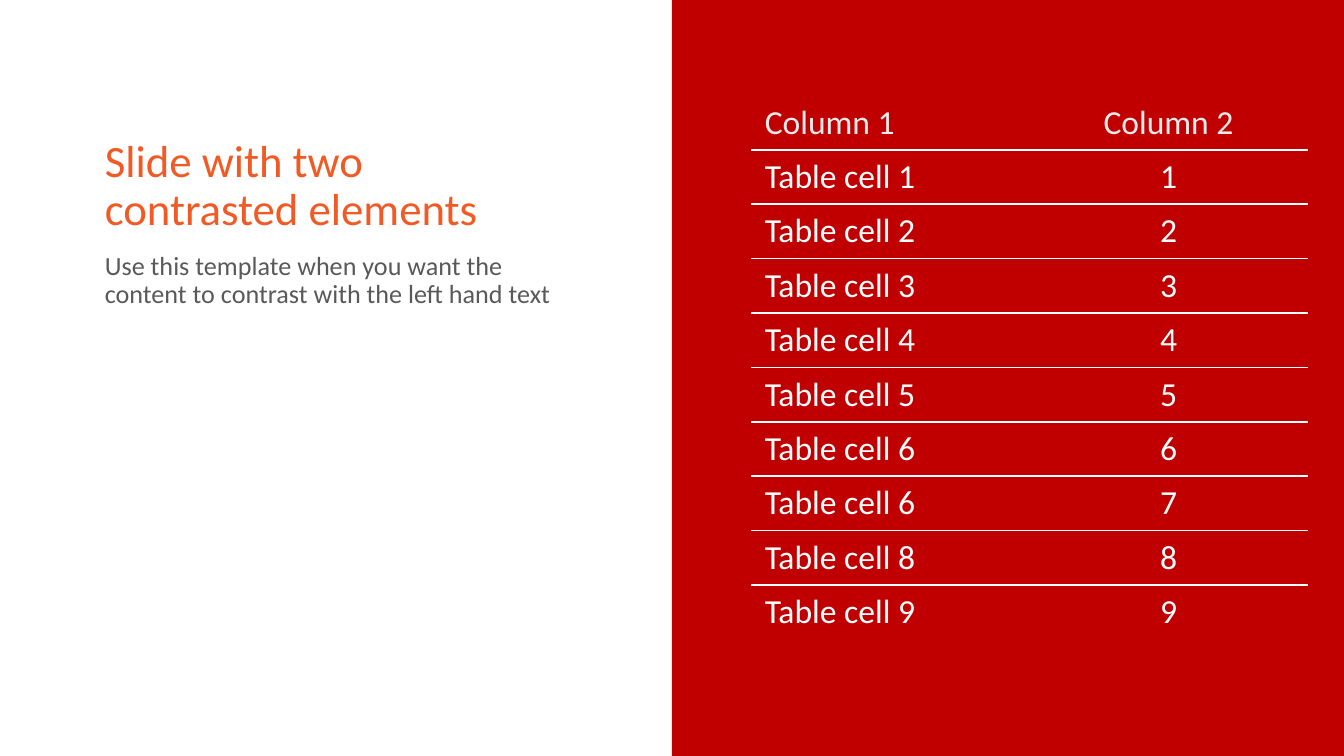
from lxml import etree
from pptx import Presentation
from pptx import util as u
from pptx.dml.color import RGBColor
from pptx.enum import shapes, text
from pptx.oxml import ns

RED = RGBColor(0xC0, 0x00, 0x00)
ORANGE = RGBColor(0xF1, 0x5A, 0x24)
GRAY = RGBColor(0x59, 0x59, 0x59)
PALE = RGBColor(0xEB, 0xEB, 0xEB)
WHITE = RGBColor(0xFF, 0xFF, 0xFF)
FONT = "Calibri"
PLAIN_TABLE_STYLE = "{2D5ABB26-0587-4C30-8999-92F81FD0307C}"


def style_text(paragraph, size, color):
    for run in paragraph.runs:
        run.font.name = FONT
        run.font.size = u.Pt(size)
        run.font.color.rgb = color


def rule_cell(cell, edge):
    """Draw a 1 pt white line on one edge of a cell: 'lnT' or 'lnB'."""
    line = etree.Element(ns.qn(f"a:{edge}"), w=str(u.Pt(1)))
    fill = etree.SubElement(line, ns.qn("a:solidFill"))
    etree.SubElement(fill, ns.qn("a:srgbClr"), val=str(WHITE))
    cell._tc.get_or_add_tcPr().insert(0, line)


deck = Presentation()
deck.slide_width = u.Inches(10)
deck.slide_height = deck.slide_width * 9 // 16
slide = deck.slides.add_slide(deck.slide_layouts[6])

# Red right half
half = deck.slide_width // 2
panel = slide.shapes.add_shape(shapes.MSO_SHAPE.RECTANGLE, half, 0, half, deck.slide_height)
panel.shadow.inherit = False
panel.fill.solid()
panel.fill.fore_color.rgb = RED
panel.line.fill.background()

# Heading and description on the left
left_texts = [
    ("Slide with two\vcontrasted elements", 1.02, 0.73, 24, ORANGE, text.MSO_ANCHOR.BOTTOM),
    ("Use this template when you want the content to contrast with the left hand text",
     1.88, 2, 14, GRAY, text.MSO_ANCHOR.TOP),
]
for wording, top, height, size, color, anchor in left_texts:
    box = slide.shapes.add_textbox(u.Inches(0.78), u.Inches(top), u.Inches(3.35), u.Inches(height))
    frame = box.text_frame
    frame.word_wrap = True
    frame.margin_left = frame.margin_right = frame.margin_top = frame.margin_bottom = 0
    frame.vertical_anchor = anchor
    frame.text = wording
    frame.paragraphs[0].line_spacing = 0.9
    style_text(frame.paragraphs[0], size, color)

# Table on the red half
labels = [1, 2, 3, 4, 5, 6, 6, 8, 9]
rows = [("Column 1", "Column 2")]
rows += [(f"Table cell {label}", str(value)) for value, label in enumerate(labels, 1)]
table = slide.shapes.add_table(
    len(rows), 2, u.Inches(5.59), u.Inches(0.71), u.Inches(4.14), u.Inches(4.05)).table
table.first_row = table.horz_banding = False
table._tbl.tblPr.find(ns.qn("a:tableStyleId")).text = PLAIN_TABLE_STYLE

for r, row in enumerate(rows):
    for c, wording in enumerate(row):
        cell = table.cell(r, c)
        cell.fill.background()
        cell.text = wording
        paragraph = cell.text_frame.paragraphs[0]
        if c == 1:
            paragraph.alignment = text.PP_ALIGN.CENTER
        style_text(paragraph, 18, WHITE if r else PALE)
        if r < len(rows) - 1:
            rule_cell(cell, "lnB")
        if r > 0:
            rule_cell(cell, "lnT")

deck.save("out.pptx")
